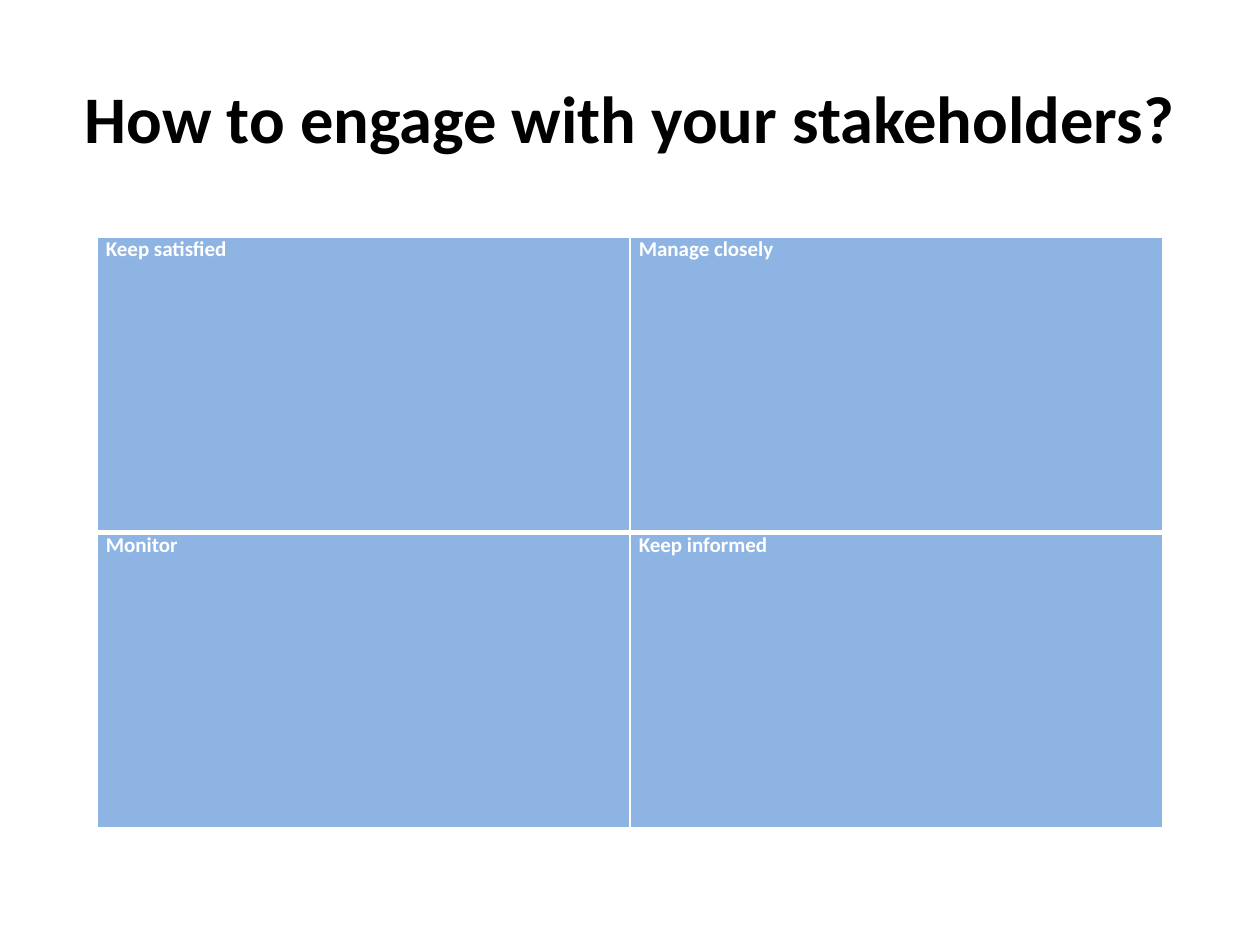
import pptx
import pptx.dml.color
import pptx.enum.text
import pptx.oxml
import pptx.oxml.ns
import pptx.util
from pptx.util import Inches

# Content
TITLE = "How to engage with your stakeholders?"
STRATEGIES = [
    ["Keep satisfied", "Manage closely"],
    ["Monitor", "Keep informed"],
]
COLOURS = {"title": "000000", "cell": "8EB4E3", "label": "FFFFFF", "border": "FFFFFF"}
FONT = "Calibri"
GRID_LEFT, GRID_TOP, GRID_WIDTH, GRID_HEIGHT = 0.77, 1.88, 8.46, 4.69


def style_font(para, size, colour):
    para.font.name = FONT
    para.font.size = pptx.util.Pt(size)
    para.font.bold = True
    para.font.color.rgb = pptx.dml.color.RGBColor.from_string(COLOURS[colour])


def set_borders(cell, widths):
    """Draw the cell's edges; widths maps an edge letter to points."""
    properties = cell._tc.get_or_add_tcPr()
    for position, (edge, width) in enumerate(widths.items()):
        line = pptx.oxml.parse_xml(
            f'<a:ln{edge} {pptx.oxml.ns.nsdecls("a")} w="{pptx.util.Pt(width)}">'
            f'<a:solidFill><a:srgbClr val="{COLOURS["border"]}"/></a:solidFill>'
            f'</a:ln{edge}>'
        )
        properties.insert(position, line)


deck = pptx.Presentation()
deck.slide_width, deck.slide_height = Inches(10), Inches(7.5)
page = deck.slides.add_slide(deck.slide_layouts[5])

# Title
title = page.shapes.title
title.left, title.top = Inches(0.5), Inches(0.3)
title.width, title.height = Inches(9), Inches(1.25)
title.text_frame.text = TITLE
title.text_frame.auto_size = pptx.enum.text.MSO_AUTO_SIZE.NONE
title.text_frame.vertical_anchor = pptx.enum.text.MSO_ANCHOR.MIDDLE
heading = title.text_frame.paragraphs[0]
heading.alignment = pptx.enum.text.PP_ALIGN.CENTER
style_font(heading, 38, "title")

# Engagement grid, with a heavier rule between the two rows
grid = page.shapes.add_table(
    len(STRATEGIES), len(STRATEGIES[0]),
    Inches(GRID_LEFT), Inches(GRID_TOP), Inches(GRID_WIDTH), Inches(GRID_HEIGHT),
).table
for row, labels in enumerate(STRATEGIES):
    for column, label in enumerate(labels):
        cell = grid.cell(row, column)
        cell.text = label
        cell.margin_left = cell.margin_right = Inches(0.07)
        cell.margin_top = cell.margin_bottom = 0
        cell.vertical_anchor = pptx.enum.text.MSO_ANCHOR.TOP
        cell.fill.solid()
        cell.fill.fore_color.rgb = pptx.dml.color.RGBColor.from_string(COLOURS["cell"])
        style_font(cell.text_frame.paragraphs[0], 12, "label")
        set_borders(cell, {"L": 1, "R": 1, "T": 3 if row == 1 else 1, "B": 3 if row == 0 else 1})

deck.save("out.pptx")
